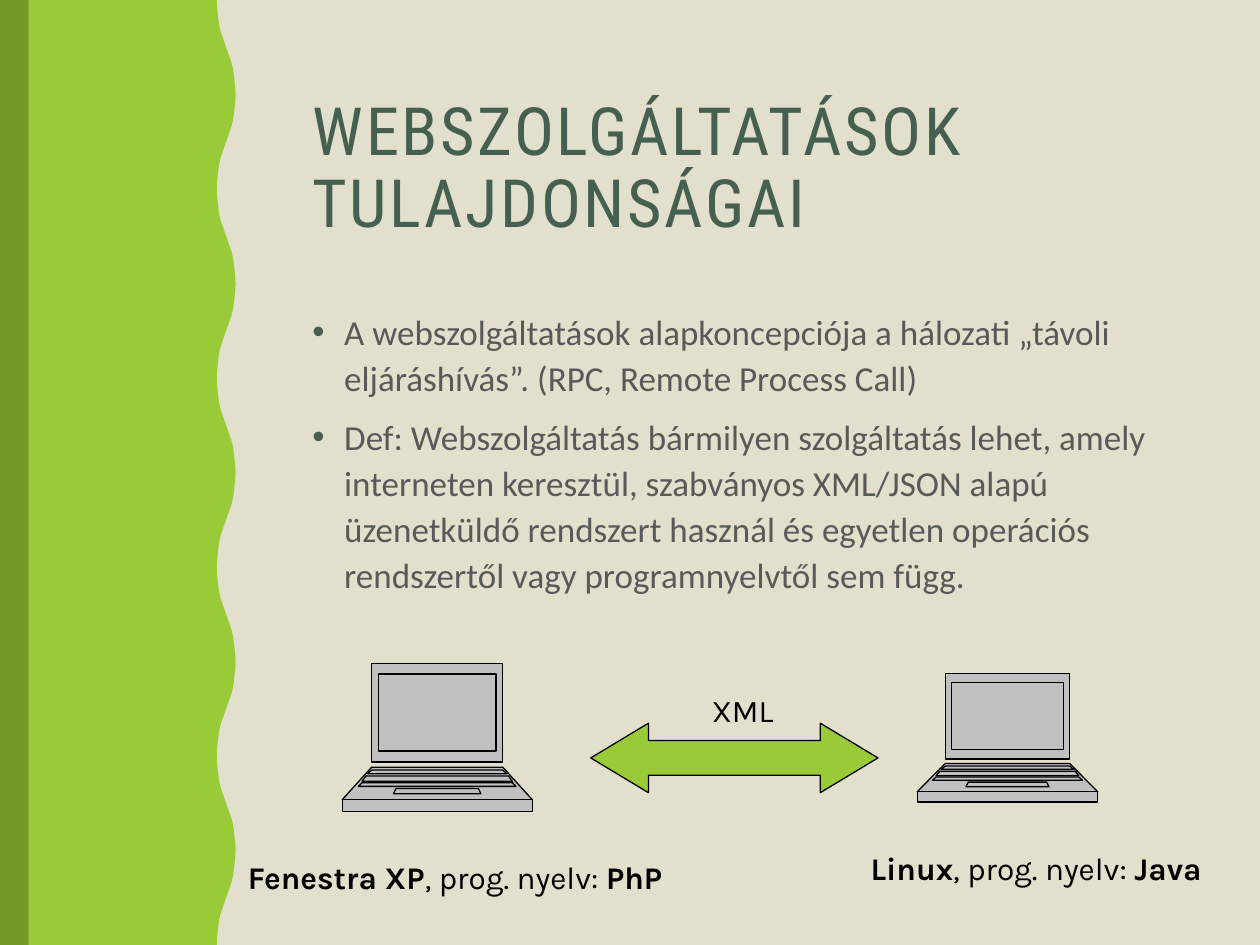
from copy import deepcopy

from lxml import etree
from pptx import Presentation
from pptx import util as u
from pptx.dml.color import RGBColor
from pptx.enum import shapes, text
from pptx.oxml.ns import qn

WIDTH, HEIGHT = 25.4, 19.05
GREEN, DARK_GREEN, TEAL = "99CB38", "739A28", "455F51"
SAND, SILVER, GREY, BLACK = "E2DFCC", "C0C0C0", "595959", "000000"

# Half a wave of the side band, from trough to crest: x and y in cm
WAVE_PERIOD = 3.81
HALF_WAVE = [(4.37, 0), (4.38, 0.18), (4.4, 0.36), (4.42, 0.51), (4.45, 0.64),
             (4.67, 1.27), (4.7, 1.4), (4.72, 1.55), (4.74, 1.73), (4.75, 1.9)]

# Laptop parts in percent: top, bottom, inset at the top, inset at the bottom
LAPTOP_PARTS = [
    (0, 66.5, 15.5, 15.5),    # lid
    (70, 92, 15.5, 0),        # deck
    (92, 100, 0, 0),          # front edge
    (7, 59, 19, 19),          # screen
    (72, 74.5, 15.5, 13.3),   # key row
    (84.5, 88, 28.3, 27),     # touchpad
    (76, 79.5, 12.5, 10.5),   # key row
    (80.5, 83, 10.5, 8.5),    # key row
]

BULLETS = [
    "A webszolgáltatások alapkoncepciója a hálozati „távoli eljáráshívás”. "
    "(RPC, Remote Process Call)",
    "Def: Webszolgáltatás bármilyen szolgáltatás lehet, amely interneten "
    "keresztül, szabványos XML/JSON alapú üzenetküldő rendszert használ és "
    "egyetlen operációs rendszertől vagy programnyelvtől sem függ.",
]


def rgb(value):
    return RGBColor.from_string(value)


def box(*sides):
    return [u.Cm(side) for side in sides]


def paint(sp, fill, line=None):
    sp.shadow.inherit = False
    sp.fill.solid()
    sp.fill.fore_color.rgb = rgb(fill)
    if line:
        sp.line.color.rgb = rgb(line)
        sp.line.width = u.Pt(0.75)
    else:
        sp.line.fill.background()


def add_preset(s, kind, at, fill, line=None):
    sp = s.shapes.add_shape(kind, *box(*at))
    paint(sp, fill, line)
    return sp


def add_outline(s, contours, fill, line=None):
    """Draw closed contours, given in cm, as one freeform with a path for each."""
    first, *others = [[box(*point) for point in c] for c in contours]
    builder = s.shapes.build_freeform(*first[0], scale=1.0)
    builder.add_line_segments(first[1:], close=True)
    for points in others:
        builder.move_to(*points[0])
        builder.add_line_segments(points[1:], close=True)
    sp = builder.convert_to_shape()
    separate_paths(sp)
    paint(sp, fill, line)


def separate_paths(sp):
    """Give each contour its own path, so that overlaps stay filled."""
    whole = next(sp._element.iter(qn("a:path")))
    paths = whole.getparent()
    empty = deepcopy(whole)
    for step in list(empty):
        empty.remove(step)
    for step in list(whole):
        if step.tag == qn("a:moveTo"):
            part = deepcopy(empty)
            paths.append(part)
        part.append(step)
    paths.remove(whole)


def add_bullet(p, color):
    pPr = p._p.get_or_add_pPr()
    pPr.set("marL", str(u.Cm(0.64)))
    pPr.set("indent", str(-u.Cm(0.64)))
    clr = etree.SubElement(pPr, qn("a:buClr"))
    etree.SubElement(clr, qn("a:srgbClr")).set("val", color)
    etree.SubElement(pPr, qn("a:buFont")).set("typeface", "Arial")
    etree.SubElement(pPr, qn("a:buChar")).set("char", "•")


def write(p, content, font="Karla", size=18, color=BLACK, bold=False,
          line=None, before=0, spacing=None):
    p.alignment = text.PP_ALIGN.LEFT
    p.space_before = u.Pt(before)
    if line:
        p.line_spacing = line
    r = p.add_run()
    r.text = content
    r.font.name = font
    r.font.size = u.Pt(size)
    r.font.bold = bold
    r.font.color.rgb = rgb(color)
    if spacing:
        r._r.get_or_add_rPr().set("spc", str(int(spacing * 100)))


def add_text_box(s, at):
    tf = s.shapes.add_textbox(*box(*at)).text_frame
    tf.word_wrap = True
    return tf


def set_title(s, content):
    sp = s.shapes.title
    sp.left, sp.top, sp.width, sp.height = box(6.05, 1.07, 17.78, 3.94)
    tf = sp.text_frame
    tf.word_wrap = True
    tf.auto_size = text.MSO_AUTO_SIZE.NONE
    tf.vertical_anchor = text.MSO_ANCHOR.BOTTOM
    write(tf.paragraphs[0], content, font="Roboto Condensed", size=38,
          color=TEAL, line=0.9, spacing=1.5)


def add_side_band(s):
    falling = [(x, WAVE_PERIOD - y) for x, y in reversed(HALF_WAVE[1:-1])]
    wave = [(x, y + n * WAVE_PERIOD)
            for n in range(5) for x, y in HALF_WAVE + falling]
    edge = [(0, 0)] + wave + [(HALF_WAVE[0][0], HEIGHT), (0, HEIGHT)]
    add_outline(s, [edge], GREEN)
    add_preset(s, shapes.MSO_SHAPE.RECTANGLE, (0, 0, 0.58, HEIGHT), DARK_GREEN)


def add_bullets(s, at, items):
    tf = add_text_box(s, at)
    for i, item in enumerate(items):
        p = tf.add_paragraph() if i else tf.paragraphs[0]
        add_bullet(p, TEAL)
        write(p, item, font="Calibri", size=20, color=GREY, line=1.1,
              before=7 if i else 0)


def add_laptop(s, left, top, width, height):
    def corner(x, y):
        return left + width * x / 100, top + height * y / 100

    contours = [[corner(a, y1), corner(100 - a, y1),
                 corner(100 - b, y2), corner(b, y2)]
                for y1, y2, a, b in LAPTOP_PARTS]
    add_outline(s, contours, SILVER, BLACK)


def add_system_label(s, at, system, language):
    p = add_text_box(s, at).paragraphs[0]
    write(p, system, bold=True)
    write(p, ", prog. nyelv: ")
    write(p, language, bold=True)


def main():
    prs = Presentation()
    prs.slide_width, prs.slide_height = box(WIDTH, HEIGHT)
    s = prs.slides.add_slide(prs.slide_layouts[5])
    s.background.fill.solid()
    s.background.fill.fore_color.rgb = rgb(SAND)

    set_title(s, "WEBSZOLGÁLTATÁSOK TULAJDONSÁGAI")
    add_side_band(s)
    add_bullets(s, (6.05, 6.05, 17.78, 10.29), BULLETS)

    add_laptop(s, 6.9, 13.38, 3.83, 2.98)
    add_laptop(s, 18.49, 13.58, 3.64, 2.59)
    arrow = add_preset(s, shapes.MSO_SHAPE.LEFT_RIGHT_ARROW,
                       (11.91, 14.58, 5.79, 1.4), GREEN, BLACK)
    arrow.adjustments[0], arrow.adjustments[1] = 0.5, 0.83
    write(add_text_box(s, (14.1, 13.8, 2.21, 1.02)).paragraphs[0], "XML")

    add_system_label(s, (4.75, 17.18, 10.57, 1.02), "Fenestra XP", "PhP")
    add_system_label(s, (17.3, 16.99, 8.84, 1.02), "Linux", "Java")
    prs.save("out.pptx")


if __name__ == "__main__":
    main()
